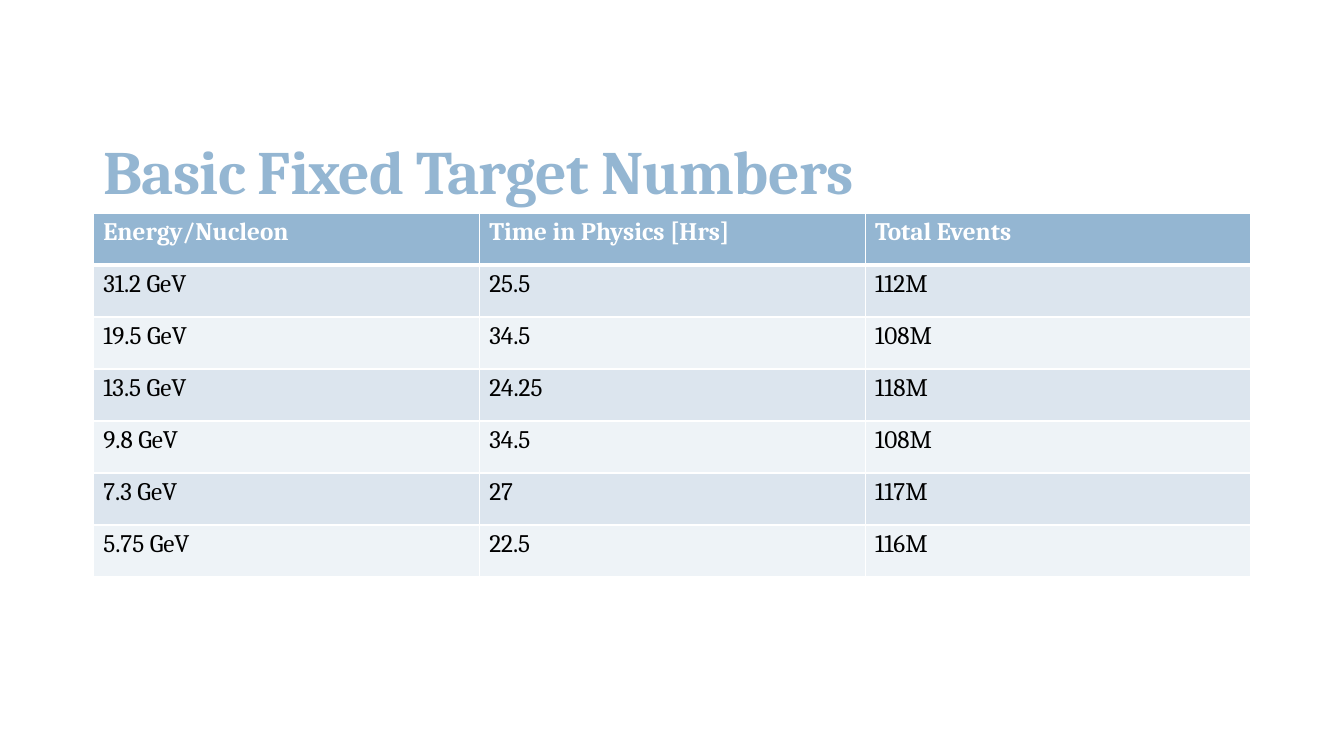
from pptx import Presentation
from pptx.dml.color import RGBColor
from pptx.enum.text import MSO_ANCHOR, MSO_AUTO_SIZE, PP_ALIGN
from pptx.oxml import parse_xml
from pptx.oxml.ns import nsdecls
from pptx.util import Cm, Pt

BLUE = RGBColor(0x94, 0xB6, 0xD2)
DARK_BAND = RGBColor(0xDC, 0xE5, 0xEE)
LIGHT_BAND = RGBColor(0xEE, 0xF3, 0xF7)
WHITE = RGBColor(0xFF, 0xFF, 0xFF)
BLACK = RGBColor(0x00, 0x00, 0x00)
LEFT = PP_ALIGN.LEFT
BOTTOM = MSO_ANCHOR.BOTTOM
NO_AUTOFIT = MSO_AUTO_SIZE.NONE
FONT = "Cambria"
TITLE_ONLY = 5

ROWS = [
    ("Energy/Nucleon", "Time in Physics [Hrs]", "Total Events"),
    ("31.2 GeV", "25.5", "112M"),
    ("19.5 GeV", "34.5", "108M"),
    ("13.5 GeV", "24.25", "118M"),
    ("9.8 GeV", "34.5", "108M"),
    ("7.3 GeV", "27", "117M"),
    ("5.75 GeV", "22.5", "116M"),
]


def write_text(frame, text, size=18, color=BLACK, bold=False, spacing=None, line_spacing=None):
    """Write one left-aligned paragraph into a text frame."""
    para = frame.paragraphs[0]
    para.alignment = LEFT
    if line_spacing is not None:
        para.line_spacing = line_spacing
    span = para.add_run()
    span.text = text
    span.font.name = FONT
    span.font.size = Pt(size)
    span.font.bold = bold
    span.font.color.rgb = color
    if spacing is not None:
        span._r.get_or_add_rPr().set("spc", str(round(spacing * 100)))


def set_borders(cell, top=1, bottom=1):
    """Draw white borders of the given point widths around a cell."""
    properties = cell._tc.get_or_add_tcPr()
    for side, width in (("L", 1), ("R", 1), ("T", top), ("B", bottom)):
        properties.append(parse_xml(
            f'<a:ln{side} {nsdecls("a")} w="{Pt(width)}"><a:solidFill>'
            f'<a:srgbClr val="{WHITE}"/></a:solidFill></a:ln{side}>'))


def add_title(page, text, left, top, width, height):
    """Place the title placeholder in its box and fill it."""
    title = page.shapes.title
    title.left, title.top, title.width, title.height = left, top, width, height
    frame = title.text_frame
    frame.word_wrap = True
    frame.auto_size = NO_AUTOFIT
    frame.vertical_anchor = BOTTOM
    frame.margin_left = frame.margin_right = Cm(0.25)
    frame.margin_top, frame.margin_bottom = Cm(0.08), Cm(0.13)
    write_text(frame, text, size=44, color=BLUE, bold=True, spacing=-0.5, line_spacing=0.9)


def add_run_table(page, rows, left, top, width, height):
    """Build the banded table of energies, hours and events."""
    table = page.shapes.add_table(len(rows), len(rows[0]), left, top, width, height).table
    for row_index, values in enumerate(rows):
        header = row_index == 0
        band = DARK_BAND if row_index % 2 else LIGHT_BAND
        for column_index, value in enumerate(values):
            cell = table.cell(row_index, column_index)
            set_borders(cell, top=3 if row_index == 1 else 1, bottom=3 if header else 1)
            cell.fill.solid()
            cell.fill.fore_color.rgb = BLUE if header else band
            write_text(cell.text_frame, value, color=WHITE if header else BLACK, bold=header)


def main():
    """Build the deck and save it."""
    deck = Presentation()
    deck.slide_width, deck.slide_height = Cm(33.87), Cm(19.05)
    page = deck.slides.add_slide(deck.slide_layouts[TITLE_ONLY])
    left, table_top, title_height = Cm(2.35), Cm(5.37), Cm(3.66)
    add_title(page, "Basic Fixed Target Numbers",
              left, table_top - title_height, Cm(23.88), title_height)
    add_run_table(page, ROWS, left, table_top, Cm(29.18), Cm(9.17))
    deck.save("out.pptx")


if __name__ == "__main__":
    main()
